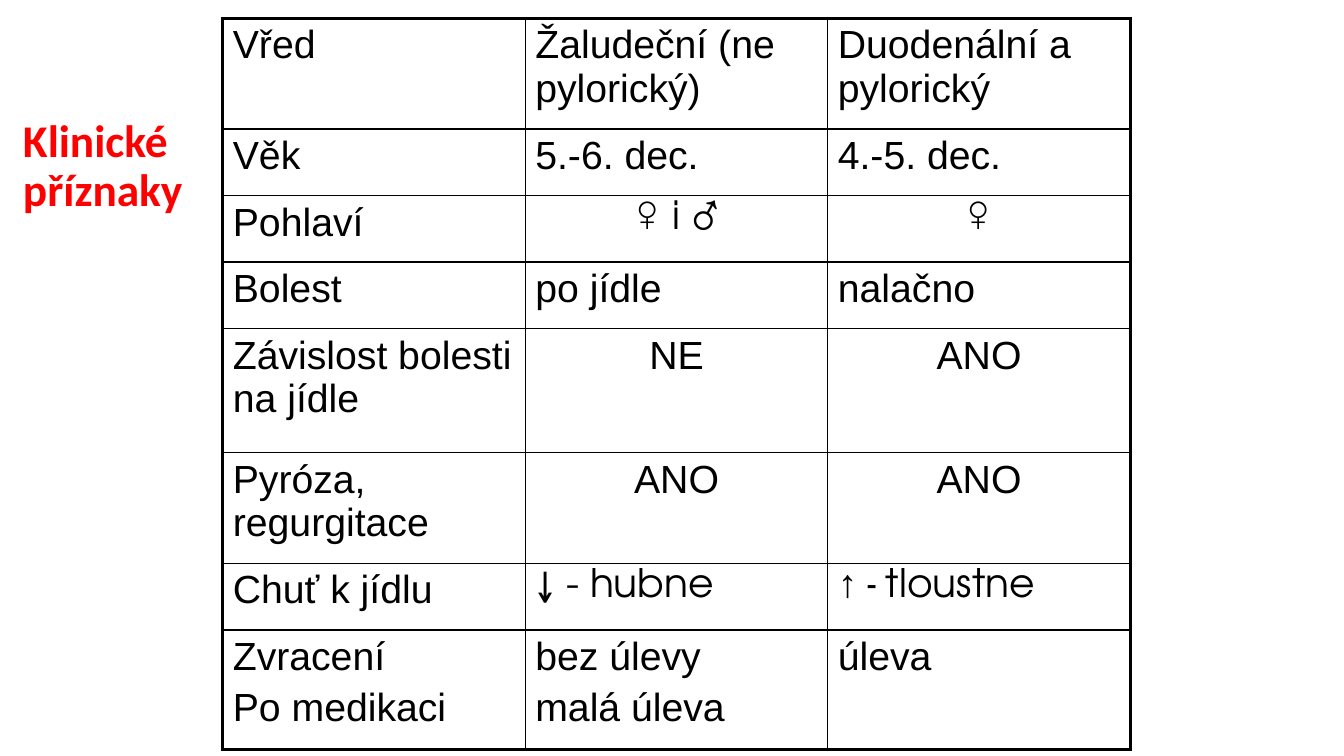
from dataclasses import dataclass

from lxml.etree import SubElement
from pptx import Presentation
from pptx.dml.color import RGBColor
from pptx.enum.text import MSO_ANCHOR, PP_ALIGN
from pptx.oxml.ns import qn
from pptx.util import Inches, Pt

COLORS = {"title": "FF0000", "text": "000000", "border": "000000"}
BODY, SYMBOL, NARROW = "Arial", "TeX Gyre Adventor", "Arial Narrow"
COL_WIDTHS = [3, 3, 3]
ROW_HEIGHTS = [1.1, 0.66, 0.66, 0.66, 1.23, 1.1, 0.66, 1.19]
INNER, OUTER = 1, 2.25


@dataclass
class Run:
    text: str
    font: str = BODY


@dataclass
class Entry:
    paragraphs: list[list[Run]]
    centered: bool = False


def plain(*lines: str, font: str = BODY) -> Entry:
    return Entry([[Run(line, font)] for line in lines])


def center(text: str, font: str = BODY) -> Entry:
    return Entry([[Run(text, font)]], True)


SYMPTOMS = [
    [plain("Vřed"), plain("Žaludeční (ne pylorický)"), plain("Duodenální a pylorický")],
    [plain("Věk"), plain("5.-6. dec."), plain("4.-5. dec.")],
    [plain("Pohlaví"), center("♀ i ♂", SYMBOL), center("♀", SYMBOL)],
    [plain("Bolest"), plain("po jídle"), plain("nalačno")],
    [plain("Závislost bolesti na jídle"), center("NE"), center("ANO")],
    [plain("Pyróza, regurgitace"), center("ANO"), center("ANO")],
    [plain("Chuť k jídlu"), plain("↓ - hubne", font=SYMBOL),
     Entry([[Run("↑ - ", NARROW), Run("tloustne", SYMBOL)]])],
    [plain("Zvracení", "Po medikaci"), plain("bez úlevy", "malá úleva"), plain("úleva")],
]


def add_run(p, run: Run, size: float, color: str, bold: bool = False) -> None:
    r = p.add_run()
    r.text = run.text
    r.font.name = run.font
    r.font.size = Pt(size)
    r.font.bold = bold
    r.font.color.rgb = RGBColor.from_string(COLORS[color])


def set_borders(cell, widths: dict[str, float]) -> None:
    tc_pr = cell._tc.get_or_add_tcPr()
    for side, width in widths.items():
        ln = SubElement(tc_pr, qn(f"a:ln{side}"), w=str(Pt(width)))
        fill = SubElement(ln, qn("a:solidFill"))
        SubElement(fill, qn("a:srgbClr"), val=COLORS["border"])


def fill_cell(cell, entry: Entry) -> None:
    tf = cell.text_frame
    for i, runs in enumerate(entry.paragraphs):
        p = tf.paragraphs[0] if i == 0 else tf.add_paragraph()
        p.alignment = PP_ALIGN.CENTER if entry.centered else PP_ALIGN.LEFT
        before = SubElement(p._p.get_or_add_pPr(), qn("a:spcBef"))
        SubElement(before, qn("a:spcPct"), val="20000")
        for run in runs:
            add_run(p, run, 28, "text")


def add_title(s) -> None:
    sp = s.shapes.add_textbox(Inches(0.13), Inches(1.03), Inches(1.84), Inches(1.25))
    tf = sp.text_frame
    tf.word_wrap = True
    tf.vertical_anchor = MSO_ANCHOR.MIDDLE
    p = tf.paragraphs[0]
    p.line_spacing = 0.9
    add_run(p, Run("Klinické příznaky", "Calibri"), 32.4, "title", True)


def add_symptom_table(s) -> None:
    rows, cols = len(ROW_HEIGHTS), len(COL_WIDTHS)
    table = s.shapes.add_table(rows, cols, Inches(2.21), Inches(0.18),
                               Inches(sum(COL_WIDTHS)), Inches(sum(ROW_HEIGHTS))).table
    table.first_row = table.horz_banding = False
    for column, width in zip(table.columns, COL_WIDTHS):
        column.width = Inches(width)
    for row, height in zip(table.rows, ROW_HEIGHTS):
        row.height = Inches(height)
    for i, entries in enumerate(SYMPTOMS):
        for j, entry in enumerate(entries):
            cell = table.cell(i, j)
            fill_cell(cell, entry)
            set_borders(cell, {
                "L": OUTER if j == 0 else INNER,
                "R": OUTER if j == cols - 1 else INNER,
                "T": OUTER if i == 0 else INNER,
                "B": OUTER if i == rows - 1 else INNER,
            })
            cell.fill.background()


def main() -> None:
    prs = Presentation()
    prs.slide_width, prs.slide_height = Inches(13.33), Inches(7.5)
    s = prs.slides.add_slide(prs.slide_layouts[6])
    add_title(s)
    add_symptom_table(s)
    prs.save("out.pptx")


if __name__ == "__main__":
    main()
